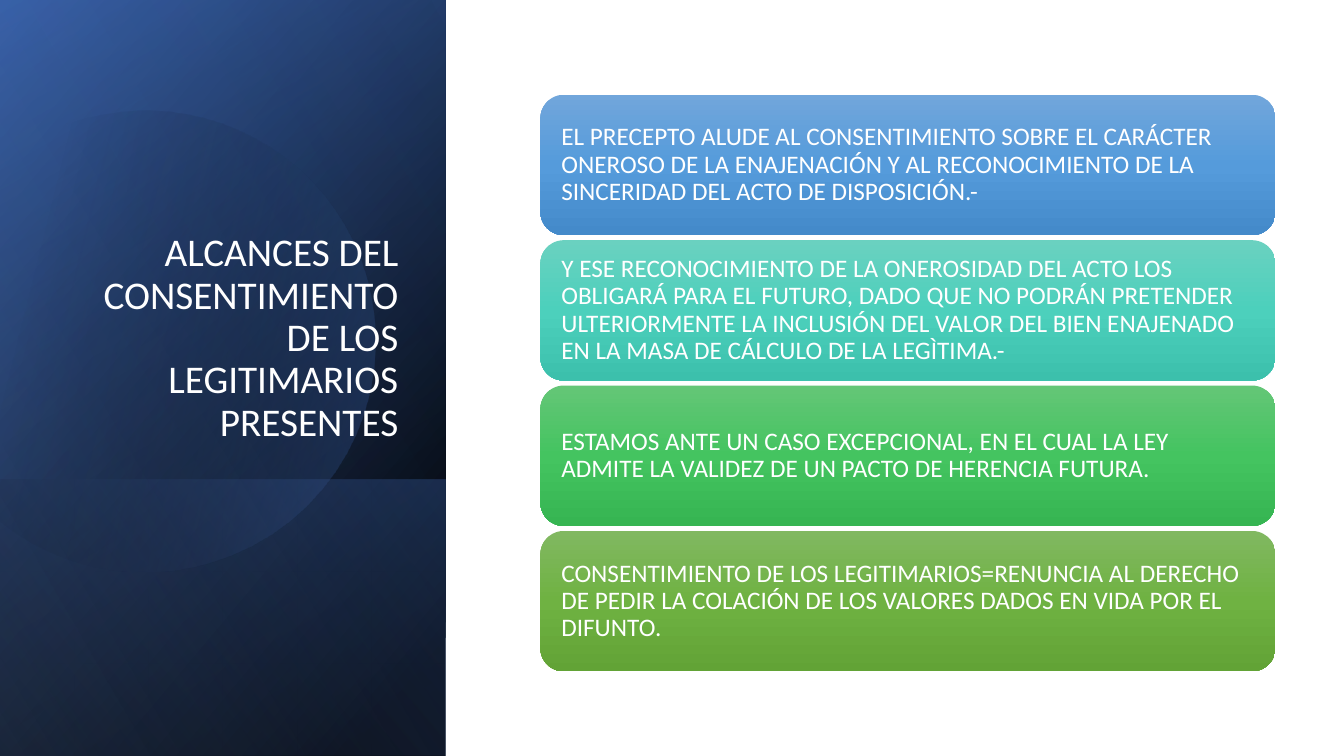
from math import cos, radians, sin

from pptx import Presentation
from pptx.dml.color import RGBColor
from pptx.enum.shapes import MSO_SHAPE
from pptx.enum.text import MSO_ANCHOR, PP_ALIGN
from pptx.oxml.ns import qn
from pptx.oxml import parse_xml
from pptx.util import Inches, Pt

RECTANGLE = MSO_SHAPE.RECTANGLE
ROUNDED = MSO_SHAPE.ROUNDED_RECTANGLE
MIDDLE, BOTTOM = MSO_ANCHOR.MIDDLE, MSO_ANCHOR.BOTTOM
LEFT, RIGHT = PP_ALIGN.LEFT, PP_ALIGN.RIGHT
TITLE_ONLY = 5
FONT = "Calibri"
NAMESPACE = "http://schemas.openxmlformats.org/drawingml/2006/main"

COLORS = {
    "white": "FFFFFF", "black": "000000", "navy": "2F5597",
    "blue": "4472C4", "pale": "8FAADC",
    "sky": ("71A6DB", "559BDB", "448ACA"),
    "teal": ("6AD1C0", "4CD0BC", "3CC0AC"),
    "green": ("64C677", "44C460", "36B552"),
    "olive": ("81B861", "6FB242", "62A336"),
}

TITLE = "ALCANCES DEL CONSENTIMIENTO DE LOS LEGITIMARIOS PRESENTES"
CARDS = [
    ("sky", "EL PRECEPTO ALUDE AL CONSENTIMIENTO SOBRE EL CARÁCTER ONEROSO DE LA "
            "ENAJENACIÓN Y AL RECONOCIMIENTO DE LA SINCERIDAD DEL ACTO DE DISPOSICIÓN.-"),
    ("teal", "Y ESE RECONOCIMIENTO DE LA ONEROSIDAD DEL ACTO LOS OBLIGARÁ PARA EL FUTURO, "
             "DADO QUE NO PODRÁN PRETENDER ULTERIORMENTE LA INCLUSIÓN DEL VALOR DEL BIEN "
             "ENAJENADO EN LA MASA DE CÁLCULO DE LA LEGÌTIMA.-"),
    ("green", "ESTAMOS ANTE UN CASO EXCEPCIONAL, EN EL CUAL LA LEY ADMITE LA VALIDEZ DE UN "
              "PACTO DE HERENCIA FUTURA."),
    ("olive", "CONSENTIMIENTO DE LOS LEGITIMARIOS=RENUNCIA AL DERECHO DE PEDIR LA COLACIÓN "
              "DE LOS VALORES DADOS EN VIDA POR EL DIFUNTO."),
]

DISC_START = (1.49, 1.1)
DISC_RIGHT = [
    ((2.46, 1.12), (3.35, 1.77), (3.63, 2.75)),
    ((3.98, 3.97), (3.28, 5.23), (2.07, 5.58)),
    ((1.31, 5.8), (0.53, 5.61), (-0.03, 5.14)),
]
DISC_EDGE = [(-0.15, 5.03), (-0.15, 1.75), (0, 1.61)]
DISC_TOP = [
    ((0.23, 1.42), (0.5, 1.28), (0.8, 1.19)),
    ((1.03, 1.13), (1.26, 1.1), (1.49, 1.1)),
]
DISC_CENTER = (1.585, 3.345)
DISC_TURN = -16.1


def paint_gradient(shape, stops, angle):
    """Fill a shape with (position, colour, opacity) stops and drop its line and shadow."""
    shape.shadow.inherit = False
    shape.line.fill.background()
    shape.fill.gradient()
    gradient = shape.element.spPr.find(qn("a:gradFill"))
    marks = "".join(
        f'<a:gs pos="{position * 1000}"><a:srgbClr val="{color}">'
        f'<a:alpha val="{opacity * 1000}"/></a:srgbClr></a:gs>'
        for position, color, opacity in stops)
    stop_list = parse_xml(f'<a:gsLst xmlns:a="{NAMESPACE}">{marks}</a:gsLst>')
    gradient.replace(gradient.find(qn("a:gsLst")), stop_list)
    gradient.find(qn("a:lin")).set("ang", str(angle * 60000))


def write_text(frame, text, size, align, anchor):
    """Set white text of one paragraph in a frame."""
    frame.text = text
    frame.word_wrap = True
    frame.vertical_anchor = anchor
    para = frame.paragraphs[0]
    para.alignment = align
    para.line_spacing = 0.9
    font = para.runs[0].font
    font.name, font.size = FONT, Pt(size)
    font.color.rgb = RGBColor.from_string(COLORS["white"])


def add_layer(page, left, top, width, height, stops, angle):
    """Add a mirrored gradient rectangle, turned a quarter, that covers the given box."""
    shift = (height - width) / 2
    layer = page.shapes.add_shape(
        RECTANGLE, Inches(left - shift), Inches(top + shift), Inches(height), Inches(width))
    layer.rotation = 90
    layer.element.spPr.find(qn("a:xfrm")).set("flipH", "1")
    paint_gradient(layer, stops, angle)


def curve_points(start, curves, steps=16):
    """Return points along joined cubic curves, after the start."""
    points = []
    for first, second, end in curves:
        for step in range(1, steps + 1):
            t = step / steps
            weights = ((1 - t) ** 3, 3 * t * (1 - t) ** 2, 3 * t * t * (1 - t), t ** 3)
            corners = (start, first, second, end)
            points.append(tuple(
                sum(weight * corner[axis] for weight, corner in zip(weights, corners))
                for axis in (0, 1)))
        start = end
    return points


def add_disc(page, left, top):
    """Add the tilted translucent disc, cut at the left edge of the panel."""
    outline = ([DISC_START] + curve_points(DISC_START, DISC_RIGHT) + DISC_EDGE
               + curve_points(DISC_EDGE[-1], DISC_TOP))
    turn = radians(-DISC_TURN)
    center_x, center_y = DISC_CENTER
    points = []
    for x, y in outline:
        across, down = x - center_x, y - center_y
        points.append((
            Inches(left + center_x + across * cos(turn) - down * sin(turn)),
            Inches(top + center_y + across * sin(turn) + down * cos(turn))))
    builder = page.shapes.build_freeform(*points[0])
    builder.add_line_segments(points[1:], close=True)
    disc = builder.convert_to_shape()
    disc.rotation = DISC_TURN
    paint_gradient(disc, [(29, COLORS["black"], 0), (100, COLORS["blue"], 43)], 30)


def add_panel(page, left, top, width, height):
    """Build the dark panel from layered gradients and place the title on it."""
    black, blue = COLORS["black"], COLORS["blue"]
    box = (left, top, width, height)
    add_layer(page, *box, [(8, black, 100), (100, COLORS["navy"], 100)], 50)
    add_layer(page, *box, [(0, black, 0), (99, blue, 46)], 30)
    band = 2.74
    add_layer(page, left, top + height - band, width, band,
              [(2, blue, 29), (100, black, 30)], 130)
    add_disc(page, left, top)
    add_layer(page, *box, [(0, black, 0), (99, COLORS["pale"], 11)], 120)

    title = page.shapes.title
    title.left, title.top = Inches(left + 0.64), Inches(top + 1.84)
    title.width, title.height = Inches(3.41), Inches(2.62)
    write_text(title.text_frame, TITLE, 28, RIGHT, BOTTOM)
    page.shapes.element.append(title.element)


def add_cards(page, left, top, width, height, gap=0.05):
    """Stack the statement cards evenly in the given box."""
    card_height = (height - gap * (len(CARDS) - 1)) / len(CARDS)
    for index, (color, text) in enumerate(CARDS):
        card = page.shapes.add_shape(
            ROUNDED, Inches(left), Inches(top + index * (card_height + gap)),
            Inches(width), Inches(card_height))
        stops = [(position, shade, 100) for position, shade in zip((0, 50, 100), COLORS[color])]
        paint_gradient(card, stops, 90)
        frame = card.text_frame
        frame.margin_left = frame.margin_right = Inches(0.14)
        frame.margin_top = frame.margin_bottom = Inches(0.07)
        write_text(frame, text, 18, LEFT, MIDDLE)


def main():
    """Build and save the deck."""
    deck = Presentation()
    deck.slide_width, deck.slide_height = Inches(13.33), Inches(7.5)
    page = deck.slides.add_slide(deck.slide_layouts[TITLE_ONLY])
    add_panel(page, 0, 0, 4.42, 7.5)
    add_cards(page, 5.36, 0.94, 7.29, 5.72)
    deck.save("out.pptx")


if __name__ == "__main__":
    main()
